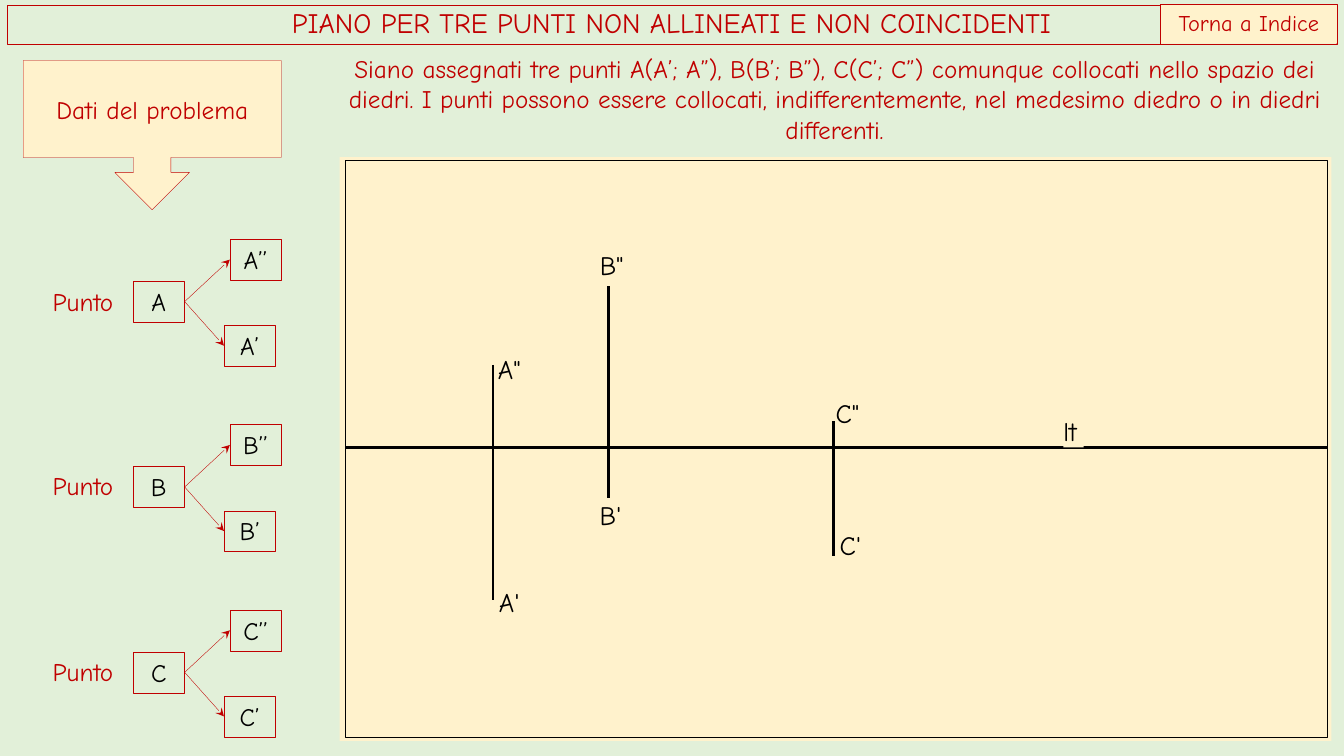
import lxml.etree
import pptx
import pptx.dml.color
import pptx.enum.shapes
import pptx.enum.text
import pptx.oxml.ns
import pptx.util

Pt = pptx.util.Pt
RGBColor = pptx.dml.color.RGBColor
SHAPE = pptx.enum.shapes.MSO_SHAPE
STRAIGHT = pptx.enum.shapes.MSO_CONNECTOR.STRAIGHT
ANCHOR = pptx.enum.text.MSO_ANCHOR
ALIGN = pptx.enum.text.PP_ALIGN
FIT = pptx.enum.text.MSO_AUTO_SIZE
qn = pptx.oxml.ns.qn

GREEN = RGBColor(0xE2, 0xF0, 0xD9)
CREAM = RGBColor(0xFF, 0xF2, 0xCC)
RED = RGBColor(0xC0, 0x00, 0x00)
BLACK = RGBColor(0x00, 0x00, 0x00)
FONT = "Comic Neue"

TITLE = "PIANO PER TRE PUNTI NON ALLINEATI E NON COINCIDENTI"
INTRO = ("Siano assegnati tre punti A(A’; A”), B(B’; B”), C(C’; C”) comunque collocati "
         "nello spazio dei diedri. I punti possono essere collocati, indifferentemente, "
         "nel medesimo diedro o in diedri differenti.")

# Boxes are left, top, width, height in points
TITLE_BOX = (5, 3.6, 949.7, 28.1)
INDEX_BOX = (828.7, 2.9, 126.7, 28.4)
INTRO_BOX = (241.9, 34.6, 708.5, 72.7)
CALLOUT_BOX = (16.6, 43.2, 184.3, 106.6)
BOARD_BOX = (242.6, 112.3, 708.5, 416.9)
FRAME_BOX = (247, 114.5, 701.3, 412.6)

GROUND_Y = 319.7
PROJECTION_LINES = [(352.1, 260.6, 428.4), (434.9, 204.5, 355.7), (595.4, 301, 397.4)]
BOARD_LABELS = [
    ("A'", 356.4, 418.3, 21.6), ("A\"", 355.7, 252, 22.3),
    ("B\"", 428.4, 177.8, 20.2), ("B'", 428.4, 356.4, 19.4),
    ("C\"", 596.9, 283.7, 19.4), ("C'", 599.8, 378, 18.7),
    ("lt", 759.6, 296.6, 14.4),
]
LABEL_HEIGHT = 23

# Point name and top of its "Punto" caption
POINTS = [("A", 200.9), ("B", 332.2), ("C", 465.3)]
FIRST_TOP, ROW_PITCH = 200.9, 132.4
BOX_WIDTH, BOX_HEIGHT = 36.9, 29.1
POINT_LEFT = 95
PROJECTIONS = [("’", 160, 31.5), ("’’", 164.2, -30)]  # suffix, left, offset from the point
CAPTION_LEFT, CAPTION_WIDTH = 28, 62.6


def write(shape, text, size, color, align=ALIGN.CENTER, anchor=ANCHOR.TOP, fit=FIT.NONE):
    frame = shape.text_frame
    frame.word_wrap = True
    frame.auto_size = fit
    frame.vertical_anchor = anchor
    paragraph = frame.paragraphs[0]
    paragraph.alignment = align
    run = paragraph.add_run()
    run.text = text
    run.font.size = Pt(size)
    run.font.name = FONT
    run.font.color.rgb = color
    return paragraph


def outline(shape, color, width):
    shape.line.color.rgb = color
    shape.line.width = Pt(width)


def add_box(shapes, box, fill=None, line=None, width=0.25, kind=SHAPE.RECTANGLE):
    shape = shapes.add_shape(kind, *map(Pt, box))
    shape.shadow.inherit = False
    if fill is None:
        shape.fill.background()
    else:
        shape.fill.solid()
        shape.fill.fore_color.rgb = fill
    if line is None:
        shape.line.fill.background()
    else:
        outline(shape, line, width)
    return shape


def add_line(shapes, start, end, color, width):
    line = shapes.add_connector(STRAIGHT, *map(Pt, start + end))
    outline(line, color, width)
    lxml.etree.SubElement(line._element.spPr, qn("a:effectLst"))
    return line


def add_arrow(shapes, source, target):
    """Join the right side of source to the left side of target."""
    arrow = add_line(shapes, (0, 0), (0, 0), RED, 0.25)
    arrow.begin_connect(source, 3)
    arrow.end_connect(target, 1)
    line = arrow._element.spPr.find(qn("a:ln"))
    lxml.etree.SubElement(line, qn("a:tailEnd"), type="stealth")


def add_caption(shapes, box, text):
    caption = shapes.add_textbox(*map(Pt, box))
    return write(caption, text, 18, RED, fit=FIT.SHAPE_TO_FIT_TEXT)


def add_point_box(shapes, left, top, text):
    box = add_box(shapes, (left, top, BOX_WIDTH, BOX_HEIGHT), line=RED)
    write(box, text, 18, BLACK, fit=FIT.SHAPE_TO_FIT_TEXT)
    return box


def add_board(shapes):
    add_box(shapes, BOARD_BOX, CREAM)
    add_box(shapes, FRAME_BOX, CREAM, BLACK, 0)
    left, _, width, _ = FRAME_BOX
    add_line(shapes, (left, GROUND_Y), (left + width, GROUND_Y), BLACK, 0)
    for x, top, bottom in PROJECTION_LINES:
        add_line(shapes, (x, top), (x, bottom), BLACK, 0)
    for text, left, top, width in BOARD_LABELS:
        label = add_box(shapes, (left, top, width, LABEL_HEIGHT), CREAM)
        write(label, text, 19, BLACK, ALIGN.LEFT, fit=FIT.SHAPE_TO_FIT_TEXT)
        frame = label.text_frame
        frame.word_wrap = False
        frame.margin_left = frame.margin_right = frame.margin_top = frame.margin_bottom = 0


def add_points(shapes):
    for row, (name, caption_top) in enumerate(POINTS):
        top = FIRST_TOP + row * ROW_PITCH
        point = add_point_box(shapes, POINT_LEFT, top, name)
        for suffix, left, offset in PROJECTIONS:
            projection = add_point_box(shapes, left, top + offset, name + suffix)
            add_arrow(shapes, point, projection)
        add_caption(shapes, (CAPTION_LEFT, caption_top, CAPTION_WIDTH, BOX_HEIGHT), "Punto")


def main():
    presentation = pptx.Presentation()
    presentation.slide_width, presentation.slide_height = Pt(960), Pt(540)
    slide = presentation.slides.add_slide(presentation.slide_layouts[5])
    slide.background.fill.solid()
    slide.background.fill.fore_color.rgb = GREEN
    shapes = slide.shapes

    title = shapes.title
    title.left, title.top, title.width, title.height = map(Pt, TITLE_BOX)
    outline(title, RED, 0.25)
    write(title, TITLE, 20, RED, anchor=ANCHOR.MIDDLE).line_spacing = 0.9

    add_caption(shapes, INTRO_BOX, INTRO).space_before = Pt(12)
    add_board(shapes.add_group_shape().shapes)
    add_points(shapes)

    callout = add_box(shapes, CALLOUT_BOX, CREAM, RED, kind=SHAPE.DOWN_ARROW_CALLOUT)
    write(callout, "Dati del problema", 18, RED, anchor=ANCHOR.MIDDLE)
    index = add_box(shapes, INDEX_BOX, CREAM, RED)
    write(index, "Torna a Indice", 16, RED, fit=FIT.SHAPE_TO_FIT_TEXT)

    presentation.save("out.pptx")


if __name__ == "__main__":
    main()
